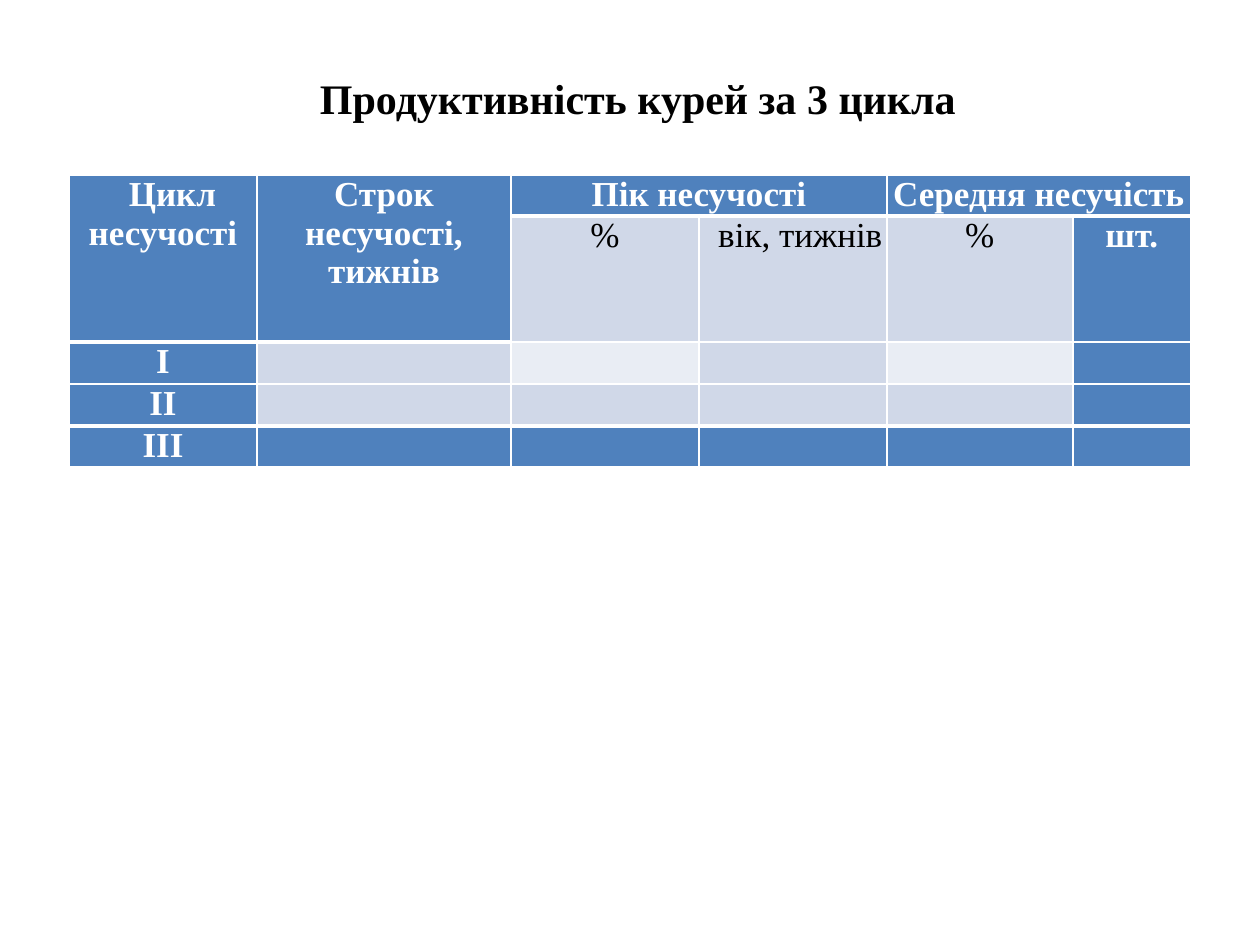
import pptx
import pptx.dml.color
import pptx.enum.text
import pptx.oxml
import pptx.oxml.ns
import pptx.util

EMU_PER_PX = 914400 // 126
FONT = "Times New Roman"
WHITE = pptx.dml.color.RGBColor(0xFF, 0xFF, 0xFF)
BLACK = pptx.dml.color.RGBColor(0x00, 0x00, 0x00)
BLUE = pptx.dml.color.RGBColor(0x4F, 0x81, 0xBD)
BAND = pptx.dml.color.RGBColor(0xD0, 0xD8, 0xE8)
PALE = pptx.dml.color.RGBColor(0xE9, 0xED, 0xF4)

COLUMN_WIDTHS = [188, 254, 188, 188, 186, 118]
ROW_HEIGHTS = [41, 126, 42, 42, 41]
CELL_TEXTS = [
    ["Цикл несучості", "Строк несучості, тижнів", "Пік несучості", "",
     "Середня несучість", ""],
    ["", "", "%", "вік, тижнів", "%", "шт."],
    ["І", "", "", "", "", ""],
    ["ІІ", "", "", "", "", ""],
    ["ІІІ", "", "", "", "", ""],
]
MERGES = [((0, 0), (1, 0)), ((0, 1), (1, 1)), ((0, 2), (0, 3)), ((0, 4), (0, 5))]
FIRST_LINE_INDENTS = {(0, 0): 19, (1, 3): 15}
THIN, THICK = 1, 3


def px(length):
    return pptx.util.Emu(length * EMU_PER_PX)


def format_text(frame, size, color, bold, indent=0):
    for paragraph in frame.paragraphs:
        paragraph.alignment = pptx.enum.text.PP_ALIGN.CENTER
        if indent:
            properties = paragraph._p.get_or_add_pPr()
            properties.set("marL", "0")
            properties.set("indent", str(px(indent)))
        for span in paragraph.runs:
            span.font.name = FONT
            span.font.size = pptx.util.Pt(size)
            span.font.bold = bold
            span.font.color.rgb = color


def add_title(page):
    box = page.shapes.add_textbox(px(289), px(66), px(683), px(63))
    frame = box.text_frame
    frame.text = "Продуктивність курей за 3 цикла"
    frame.word_wrap = False
    frame.auto_size = pptx.enum.text.MSO_AUTO_SIZE.SHAPE_TO_FIT_TEXT
    frame.vertical_anchor = pptx.enum.text.MSO_ANCHOR.MIDDLE
    format_text(frame, 24, BLACK, True, indent=15)


def cell_color(row, column):
    is_header = row == 0 or (row == 1 and column < 2)
    if is_header or column in (0, 5) or row == 4:
        return BLUE
    return PALE if row == 2 and column in (2, 4) else BAND


def line_width_below(row, column):
    """Thick lines close the header and open the last row."""
    header_end = 1 if column < 2 else 0
    return THICK if row in (header_end, 3) else THIN


def set_borders(cell, top, bottom):
    properties = cell._tc.get_or_add_tcPr()
    sides = [("L", THIN), ("R", THIN), ("T", top), ("B", bottom)]
    for position, (side, width) in enumerate(sides):
        line = pptx.oxml.parse_xml(
            f'<a:ln{side} {pptx.oxml.ns.nsdecls("a")} w="{pptx.util.Pt(width)}">'
            f'<a:solidFill><a:srgbClr val="{WHITE}"/></a:solidFill></a:ln{side}>')
        properties.insert(position, line)


def fill_cell(cell, row, column):
    cell.margin_left = cell.margin_right = 0
    cell.margin_top = cell.margin_bottom = 0
    color = cell_color(row, column)
    cell.fill.solid()
    cell.fill.fore_color.rgb = color
    top = line_width_below(row - 1, column)
    set_borders(cell, top, line_width_below(row, column))
    text = CELL_TEXTS[row][column]
    if text:
        cell.text_frame.text = text
        on_blue = color == BLUE
        format_text(cell.text_frame, 20, WHITE if on_blue else BLACK, on_blue,
                    FIRST_LINE_INDENTS.get((row, column), 0))


def add_productivity_table(page):
    table = page.shapes.add_table(
        len(ROW_HEIGHTS), len(COLUMN_WIDTHS), px(69), px(175),
        px(sum(COLUMN_WIDTHS)), px(sum(ROW_HEIGHTS))).table
    for column, width in zip(table.columns, COLUMN_WIDTHS):
        column.width = px(width)
    for row, height in zip(table.rows, ROW_HEIGHTS):
        row.height = px(height)
    for first, last in MERGES:
        table.cell(*first).merge(table.cell(*last))
    for row in range(len(ROW_HEIGHTS)):
        for column in range(len(COLUMN_WIDTHS)):
            fill_cell(table.cell(row, column), row, column)


def main():
    deck = pptx.Presentation()
    deck.slide_width = pptx.util.Inches(10)
    deck.slide_height = pptx.util.Inches(7.5)
    page = deck.slides.add_slide(deck.slide_layouts[6])
    add_productivity_table(page)
    add_title(page)
    deck.save("out.pptx")


if __name__ == "__main__":
    main()
